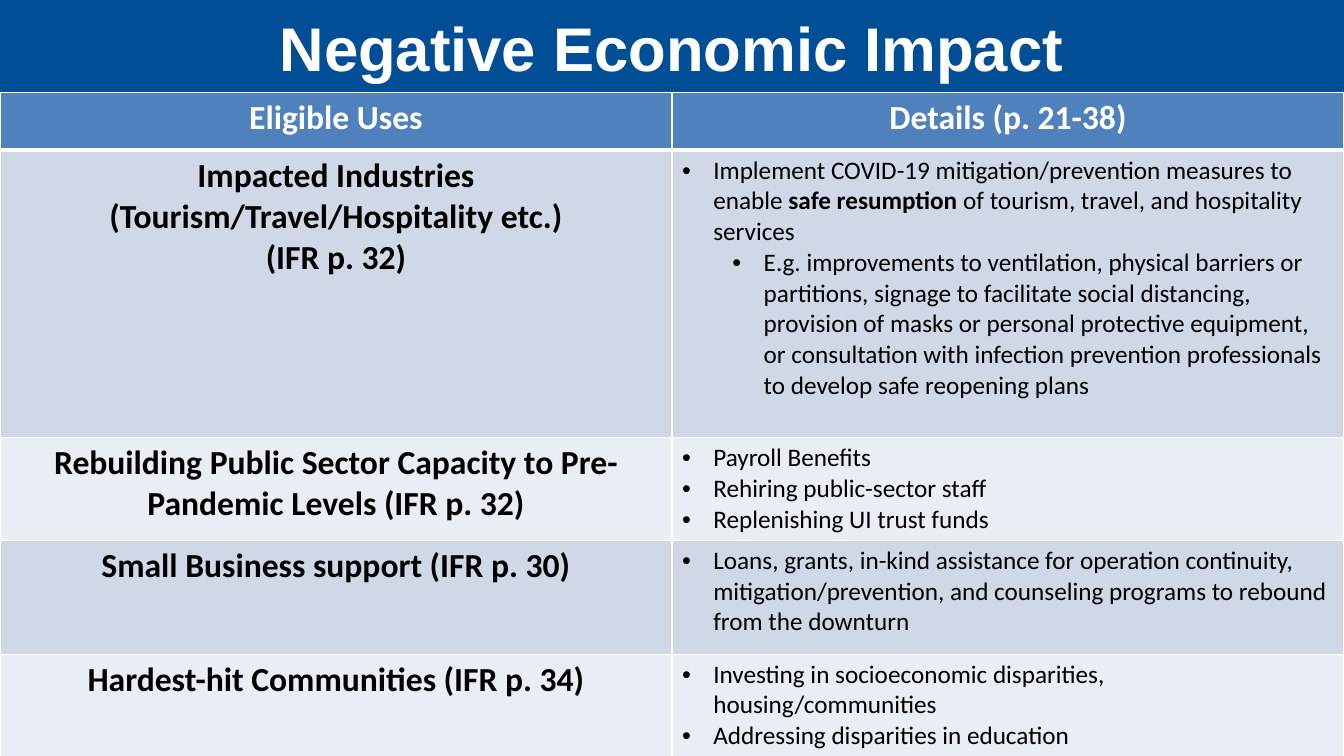
import pptx
import pptx.dml.color
import pptx.enum.shapes
import pptx.enum.text
import pptx.oxml
import pptx.oxml.ns
import pptx.util
from dataclasses import dataclass
from pptx.util import Inches


@dataclass(frozen=True)
class Theme:
    title_fill: str = "004E95"
    header_fill: str = "4F81BD"
    bands: tuple = ("D0D8E8", "E9EDF4")
    white: str = "FFFFFF"
    black: str = "000000"
    title_font: str = "Arial"
    table_font: str = "Calibri"
    title_size: int = 44
    heading_size: int = 24
    detail_size: int = 18


THEME = Theme()
SLIDE_WIDTH, SLIDE_HEIGHT = 13.33, 7.5
TITLE_HEIGHT = 0.92
ROW_HEIGHTS = (0.57, 2.85, 1.02, 1.13, 1.02)
BULLET_HANG = 0.31
LEVEL_STEP = 0.5

HEADERS = ("Eligible Uses", "Details (p. 21-38)")

# Each row: heading lines, then (level, [(text, bold), ...]) for every bullet
ROWS = [
    (["Impacted Industries", "(Tourism/Travel/Hospitality etc.)", "(IFR p. 32)"],
     [(0, [("Implement COVID-19 mitigation/prevention measures to enable ", False),
           ("safe resumption ", True),
           ("of tourism, travel, and hospitality services", False)]),
      (1, [("E.g. improvements to ventilation, physical barriers or partitions, "
            "signage to facilitate social distancing, provision of masks or "
            "personal protective equipment, or consultation with infection "
            "prevention professionals to develop safe reopening plans", False)])]),
    (["Rebuilding Public Sector Capacity to Pre-Pandemic Levels (IFR p. 32)"],
     [(0, [("Payroll Benefits", False)]),
      (0, [("Rehiring public-sector staff", False)]),
      (0, [("Replenishing UI trust funds", False)])]),
    (["Small Business support (IFR p. 30)"],
     [(0, [("Loans, grants, in-kind assistance for operation continuity, "
            "mitigation/prevention, and counseling programs to rebound from "
            "the downturn", False)])]),
    (["Hardest-hit Communities (IFR p. 34)"],
     [(0, [("Investing in socioeconomic disparities, housing/communities", False)]),
      (0, [("Addressing disparities in education", False)])]),
]


def rgb(value):
    return pptx.dml.color.RGBColor.from_string(value)


def add_run(paragraph, text, color, **font_format):
    run = paragraph.add_run()
    run.text = text
    for name, value in font_format.items():
        setattr(run.font, name, value)
    run.font.color.rgb = rgb(color)


def paragraphs_for(text_frame, items):
    """Yield one paragraph with each item."""
    for index, item in enumerate(items):
        yield (text_frame.add_paragraph() if index else text_frame.paragraphs[0]), item


def add_centered_lines(text_frame, lines, color, font, size):
    for paragraph, line in paragraphs_for(text_frame, lines):
        paragraph.alignment = pptx.enum.text.PP_ALIGN.CENTER
        add_run(paragraph, line, color, name=font, size=pptx.util.Pt(size), bold=True)


def add_bullets(text_frame, bullets):
    namespace = pptx.oxml.ns.nsdecls("a")
    for paragraph, (level, runs) in paragraphs_for(text_frame, bullets):
        paragraph.level = level
        properties = paragraph._p.get_or_add_pPr()
        properties.set("marL", str(Inches(BULLET_HANG + level * LEVEL_STEP)))
        properties.set("indent", str(-Inches(BULLET_HANG)))
        for tag in ('buFont typeface="Arial"', 'buChar char="•"'):
            properties.append(pptx.oxml.parse_xml(f"<a:{tag.replace(' ', f' {namespace} ', 1)}/>"))
        for text, bold in runs:
            add_run(paragraph, text, THEME.black, name=THEME.table_font,
                    size=pptx.util.Pt(THEME.detail_size), bold=bold)


def style_cell(cell, fill, top=1, bottom=1):
    """Draw white borders, with widths in points, and a solid fill."""
    properties = cell._tc.get_or_add_tcPr()
    for side, width in {"L": 1, "R": 1, "T": top, "B": bottom}.items():
        properties.append(pptx.oxml.parse_xml(
            f'<a:ln{side} {pptx.oxml.ns.nsdecls("a")} w="{pptx.util.Pt(width)}">'
            f'<a:solidFill><a:srgbClr val="{THEME.white}"/></a:solidFill></a:ln{side}>'))
    cell.fill.solid()
    cell.fill.fore_color.rgb = rgb(fill)


def add_title(slide, text):
    shape = slide.shapes.add_shape(
        pptx.enum.shapes.MSO_SHAPE.RECTANGLE,
        0, 0, Inches(SLIDE_WIDTH), Inches(TITLE_HEIGHT))
    shape.shadow.inherit = False
    shape.fill.solid()
    shape.fill.fore_color.rgb = rgb(THEME.title_fill)
    shape.line.fill.background()
    shape.text_frame.vertical_anchor = pptx.enum.text.MSO_ANCHOR.MIDDLE
    add_centered_lines(shape.text_frame, [text], THEME.white,
                       THEME.title_font, THEME.title_size)


def add_uses_table(slide):
    table = slide.shapes.add_table(
        len(ROW_HEIGHTS), len(HEADERS), 0, Inches(TITLE_HEIGHT),
        Inches(SLIDE_WIDTH), Inches(sum(ROW_HEIGHTS))).table
    for row, height in zip(table.rows, ROW_HEIGHTS):
        row.height = Inches(height)

    # Header row
    for column, header in enumerate(HEADERS):
        cell = table.cell(0, column)
        style_cell(cell, THEME.header_fill, bottom=3)
        add_centered_lines(cell.text_frame, [header], THEME.white,
                           THEME.table_font, THEME.heading_size)

    # Banded body rows
    for index, (heading, bullets) in enumerate(ROWS):
        use_cell, detail_cell = table.rows[index + 1].cells
        for cell in (use_cell, detail_cell):
            style_cell(cell, THEME.bands[index % 2], top=1 if index else 3)
        add_centered_lines(use_cell.text_frame, heading, THEME.black,
                           THEME.table_font, THEME.heading_size)
        add_bullets(detail_cell.text_frame, bullets)


def main():
    presentation = pptx.Presentation()
    presentation.slide_width = Inches(SLIDE_WIDTH)
    presentation.slide_height = Inches(SLIDE_HEIGHT)
    slide = presentation.slides.add_slide(presentation.slide_layouts[6])
    add_title(slide, "Negative Economic Impact")
    add_uses_table(slide)
    presentation.save("out.pptx")


if __name__ == "__main__":
    main()
